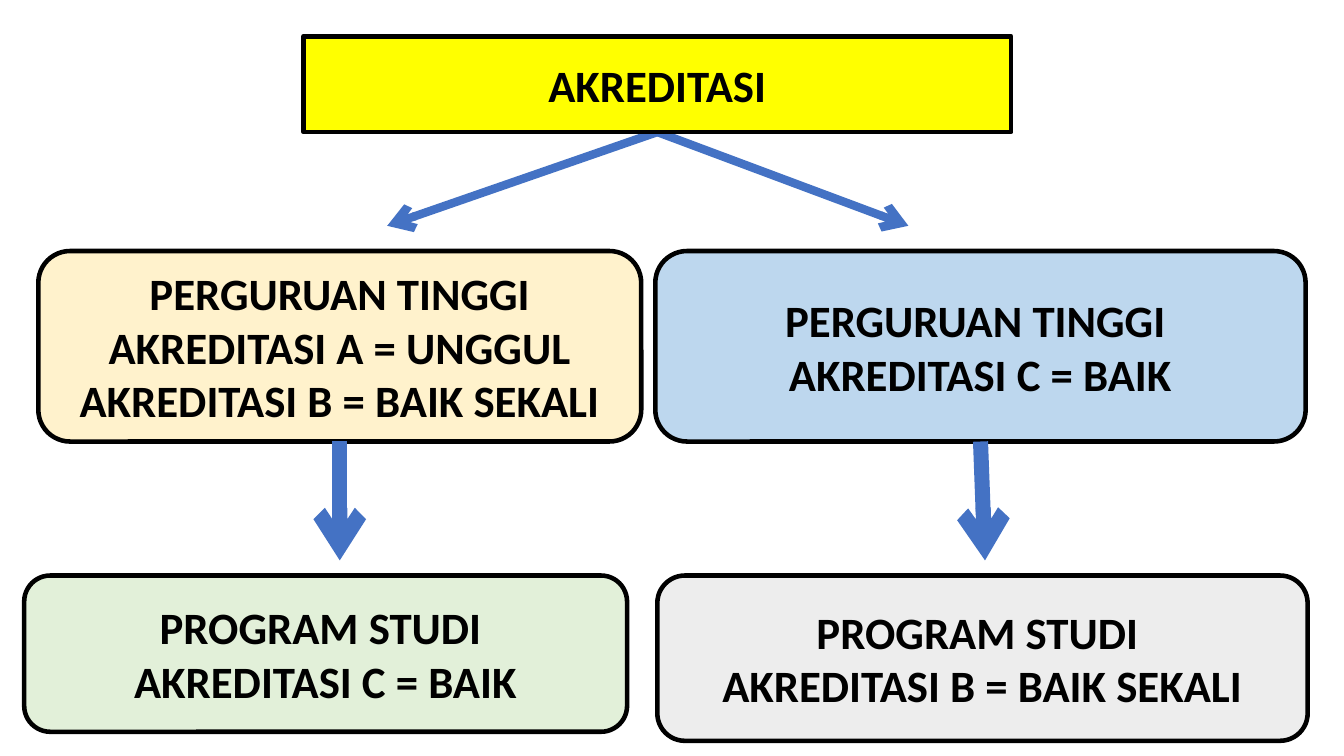
from lxml.etree import SubElement
from pptx import Presentation
from pptx.dml.color import RGBColor
from pptx.enum.shapes import MSO_CONNECTOR as Connector, MSO_SHAPE as Preset
from pptx.enum.text import MSO_ANCHOR as Anchor, PP_ALIGN as Align
from pptx.oxml.ns import qn
from pptx.util import Inches, Pt

COLORS = {
    "yellow": "FFFF00", "cream": "FFF2CC", "blue": "BDD7EE", "green": "E2F0D9",
    "gray": "EDEDED", "black": "000000", "arrow": "4472C4",
}
WIDTH, HEIGHT = Inches(13.33), Inches(7.5)
TITLE_ONLY = 5
BOTTOM = 2

# Lengths below are percentages of the slide's width and height.
LEFT_WIDTH, RIGHT_WIDTH = 44.86, 48.39
CAMPUS_TOP, PROGRAM_TOP = 33.2, 76.13
CAMPUS_HEIGHT = 25.2
BOXES = {
    "accreditation": ("yellow", (22.58, 4.8, 52.66, 12.67), ["AKREDITASI"]),
    "campus_left": ("cream", (2.85, CAMPUS_TOP, LEFT_WIDTH, CAMPUS_HEIGHT),
                    ["PERGURUAN TINGGI AKREDITASI A = UNGGUL", "AKREDITASI B = BAIK SEKALI"]),
    "campus_right": ("blue", (48.76, CAMPUS_TOP, RIGHT_WIDTH, CAMPUS_HEIGHT),
                     ["PERGURUAN TINGGI ", "AKREDITASI C = BAIK"]),
    "program_left": ("green", (1.8, PROGRAM_TOP, LEFT_WIDTH, 20.67),
                     ["PROGRAM STUDI ", "AKREDITASI C = BAIK"]),
    "program_right": ("gray", (48.91, PROGRAM_TOP, RIGHT_WIDTH, 21.87),
                      ["PROGRAM STUDI ", "AKREDITASI B = BAIK SEKALI"]),
}
ARROWS = [
    ("accreditation", (28.81, 29.87), 6),
    ("accreditation", (67.59, 29.87), 6),
    ("campus_left", (25.28, 74.13), 10.75),
    ("campus_right", (73.29, 74.13), 10.75),
]


def color(name):
    return RGBColor.from_string(COLORS[name])


def across(percent):
    return round(WIDTH * percent / 100)


def down(percent):
    return round(HEIGHT * percent / 100)


def place_title(slide, bounds):
    title = slide.shapes.title
    title.left, title.top, title.width, title.height = bounds
    geometry = SubElement(title._element.spPr, qn("a:prstGeom"), prst="roundRect")
    SubElement(geometry, qn("a:avLst"))
    return title


def format_box(shape, fill, lines):
    shape.shadow.inherit = False
    shape.fill.solid()
    shape.fill.fore_color.rgb = color(fill)
    shape.line.color.rgb = color("black")
    shape.line.width = Pt(3.25)
    frame = shape.text_frame
    frame.word_wrap = True
    frame.vertical_anchor = Anchor.MIDDLE
    for index, line in enumerate(lines):
        paragraph = frame.add_paragraph() if index else frame.paragraphs[0]
        paragraph.alignment = Align.CENTER
        run = paragraph.add_run()
        run.text = line
        run.font.name = "Calibri"
        run.font.size = Pt(32)
        run.font.bold = True
        run.font.color.rgb = color("black")


def add_arrow(slide, source, end, width):
    x, y = across(end[0]), down(end[1])
    arrow = slide.shapes.add_connector(Connector.STRAIGHT, x, y, x, y)
    arrow.begin_connect(source, BOTTOM)
    arrow.line.color.rgb = color("arrow")
    arrow.line.width = Pt(width)
    SubElement(arrow.line._get_or_add_ln(), qn("a:tailEnd"), type="arrow")
    SubElement(arrow._element.spPr, qn("a:effectLst"))
    return arrow


def main():
    presentation = Presentation()
    presentation.slide_width, presentation.slide_height = WIDTH, HEIGHT
    slide = presentation.slides.add_slide(presentation.slide_layouts[TITLE_ONLY])

    shapes = {}
    for name, (fill, (left, top, width, height), lines) in BOXES.items():
        bounds = across(left), down(top), across(width), down(height)
        if name == "accreditation":
            shapes[name] = place_title(slide, bounds)
        else:
            shapes[name] = slide.shapes.add_shape(Preset.ROUNDED_RECTANGLE, *bounds)
        format_box(shapes[name], fill, lines)

    for source, end, width in ARROWS:
        arrow = add_arrow(slide, shapes[source], end, width)
        if source == "accreditation":
            shapes[source]._element.addprevious(arrow._element)

    presentation.save("out.pptx")


if __name__ == "__main__":
    main()
